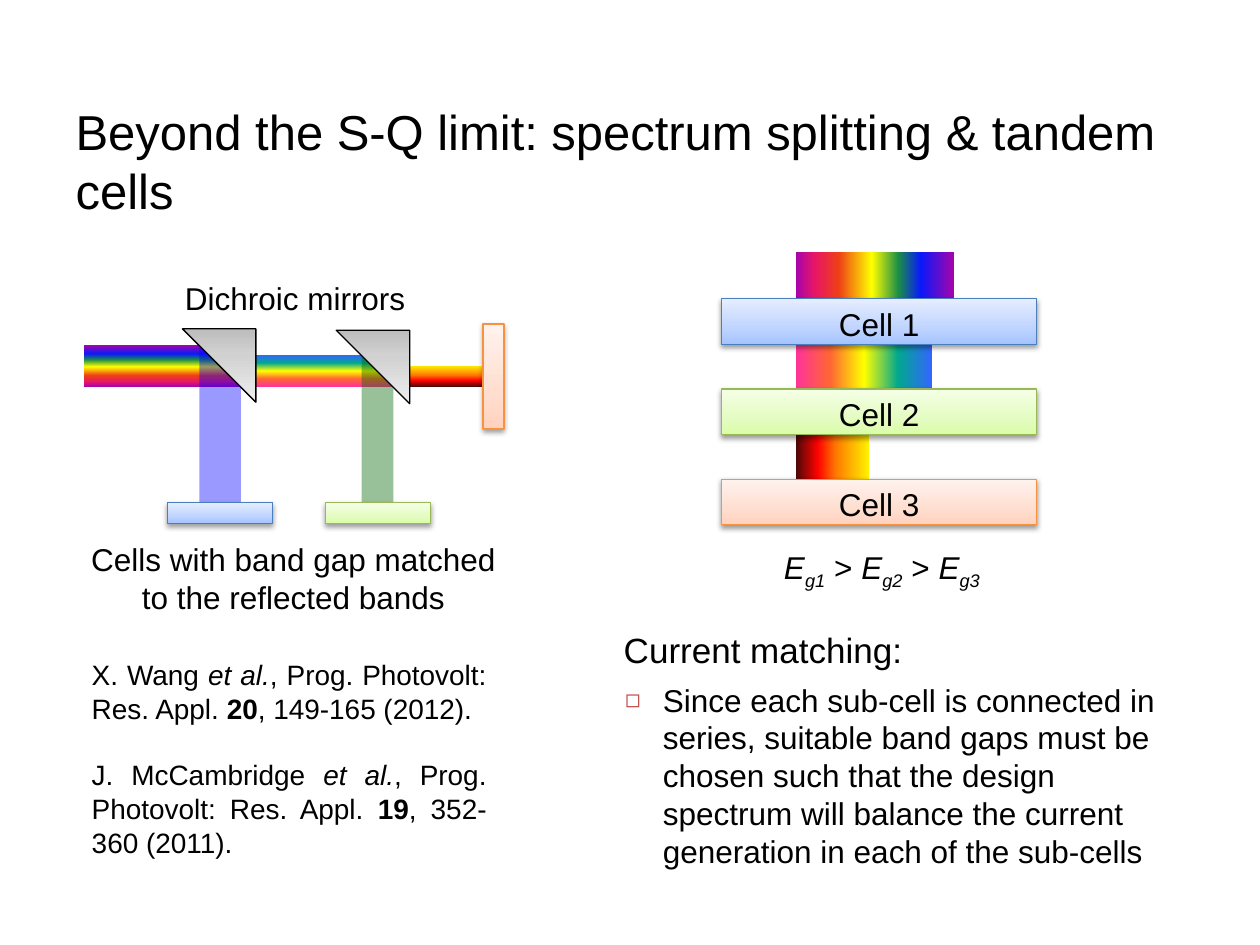
from dataclasses import dataclass

from lxml import etree
from pptx import Presentation
from pptx.dml.color import RGBColor
from pptx.enum.shapes import MSO_SHAPE
from pptx.enum.text import MSO_ANCHOR, MSO_AUTO_SIZE, PP_ALIGN
from pptx.oxml.ns import qn
from pptx.util import Cm, Pt

RECT, WEDGE = MSO_SHAPE.RECTANGLE, MSO_SHAPE.RIGHT_TRIANGLE
TOP, MIDDLE = MSO_ANCHOR.TOP, MSO_ANCHOR.MIDDLE
LEFT, CENTER, JUSTIFY = PP_ALIGN.LEFT, PP_ALIGN.CENTER, PP_ALIGN.JUSTIFY
FIXED = MSO_AUTO_SIZE.NONE


@dataclass(frozen=True)
class Theme:
    font: str = "Arial"
    ink: str = "000000"
    mark: str = "C0504D"
    blue: str = "0000FF"
    green: str = "006600"
    title: int = 28
    head: int = 20
    text: int = 18
    small: int = 16
    full: tuple = ((0, "A603AB"), (21, "0819FB"), (35, "1A8D48"), (52, "FFFF00"),
                   (73, "EE3F17"), (88, "E81766"), (100, "A603AB"))
    mid: tuple = ((0, "FF3399"), (25, "FF6633"), (50, "FFFF00"),
                  (75, "01A78F"), (100, "3366FF"))
    low: tuple = ((0, "FFF200"), (45, "FF7A00"), (70, "FF0300"), (100, "4D0808"))
    glass: tuple = ((0, "BDBDBD"), (35, "D1D1D1"), (100, "EEEEEE"))
    cells: tuple = (
        (((0, "A4C4FF"), (35, "BFD4FF"), (100, "E6EEFF")), "4B7EBC"),
        (((0, "DAFDA7"), (35, "E4FCC2"), (100, "F5FFE7")), "98B955"),
        (((0, "FFD2BD"), (35, "FFDED0"), (100, "FFF2ED")), "F69240"),
    )


def node(parent, tag, **attrs):
    return etree.SubElement(parent, qn(tag), {k: str(v) for k, v in attrs.items()})


class Deck:
    def __init__(self, theme):
        self.theme = theme
        self.file = Presentation()
        self.file.slide_width, self.file.slide_height = Cm(25.4), Cm(19.05)
        self.slide = self.file.slides.add_slide(self.file.slide_layouts[1])

    def style(self, para, size, align):
        para.alignment = align
        for run in para.runs:
            run.font.name = self.theme.font
            run.font.size = Pt(size)
            run.font.color.rgb = RGBColor.from_string(self.theme.ink)

    def place(self, shape, box):
        shape.left, shape.top, shape.width, shape.height = map(Cm, box)
        frame = shape.text_frame
        frame.word_wrap = True
        frame.auto_size = FIXED
        return frame

    def shape(self, kind, box, line=None):
        item = self.slide.shapes.add_shape(kind, *map(Cm, box))
        item.shadow.inherit = False
        if line:
            item.line.color.rgb = RGBColor.from_string(line)
            item.line.width = Pt(0.75)
        else:
            item.line.fill.background()
        return item

    def blend(self, item, stops, angle):
        item.fill.gradient()
        grad = item._element.spPr.find(qn("a:gradFill"))
        for child in list(grad):
            grad.remove(child)
        ramp = node(grad, "a:gsLst")
        for pos, color in stops:
            node(node(ramp, "a:gs", pos=pos * 1000), "a:srgbClr", val=color)
        node(grad, "a:lin", ang=angle * 60000, scaled=0)

    def beam(self, box, stops, angle):
        self.blend(self.shape(RECT, box), stops, angle)

    def ray(self, box, color):
        item = self.shape(RECT, box)
        item.fill.solid()
        item.fill.fore_color.rgb = RGBColor.from_string(color)
        tint = item._element.spPr.find(qn("a:solidFill")).find(qn("a:srgbClr"))
        node(tint, "a:alpha", val=40000)

    def mirror(self, box):
        item = self.shape(WEDGE, box, self.theme.ink)
        self.blend(item, self.theme.glass, 270)
        form = item._element.spPr.find(qn("a:xfrm"))
        form.set("flipH", "1")
        form.set("flipV", "1")

    def cell(self, box, look, label=None):
        stops, line = look
        item = self.shape(RECT, box, line)
        self.blend(item, stops, 270)
        list_ = item._element.spPr.find(qn("a:effectLst"))
        shade = node(list_, "a:outerShdw", blurRad=Pt(3.1), dist=Pt(1.6),
                     dir=5400000, rotWithShape=0)
        node(node(shade, "a:srgbClr", val=self.theme.ink), "a:alpha", val=38000)
        if label:
            frame = item.text_frame
            frame.vertical_anchor = TOP
            frame.text = label
            self.style(frame.paragraphs[0], self.theme.text, CENTER)

    def text(self, box, paras, size, align=CENTER, gap=0):
        item = self.slide.shapes.add_textbox(*map(Cm, box))
        frame = self.place(item, box)
        for i, parts in enumerate(paras):
            para = frame.add_paragraph() if i else frame.paragraphs[0]
            if i:
                para.space_before = Pt(gap)
            for words, look in parts:
                run = para.add_run()
                run.text = words
                run.font.italic = "i" in look
                run.font.bold = "b" in look
                if "s" in look:
                    run._r.get_or_add_rPr().set("baseline", "-25000")
            self.style(para, size, align)

    def title(self, box, words):
        frame = self.place(self.slide.shapes.title, box)
        frame.vertical_anchor = MIDDLE
        frame.text = words
        self.style(frame.paragraphs[0], self.theme.title, LEFT)

    def body(self, box, head, point):
        frame = self.place(self.slide.placeholders[1], box)
        frame.margin_top = Cm(0.34)
        frame.text = head
        first = frame.paragraphs[0]
        props = first._p.get_or_add_pPr()
        props.set("marL", "0")
        props.set("indent", "0")
        first.space_before = Pt(0)
        node(props, "a:buNone")
        self.style(first, self.theme.head, LEFT)
        item = frame.add_paragraph()
        item.text = point
        item.level = 1
        item.space_before = Pt(6)
        props = item._p.get_or_add_pPr()
        props.set("marL", str(Cm(0.79)))
        props.set("indent", str(Cm(-0.76)))
        node(node(props, "a:buClr"), "a:srgbClr", val=self.theme.mark)
        node(props, "a:buSzPct", val=80000)
        node(props, "a:buChar", char="◻")
        self.style(item, self.theme.text, LEFT)


def main():
    theme = Theme()
    deck = Deck(theme)
    deck.title((1.27, 1.75, 22.86, 2.97),
               "Beyond the S-Q limit: spectrum splitting & tandem cells")

    beams = ((theme.full, 90, (1.7, 6.96, 3.18, 0.84), 3.18),
             (theme.mid, 270, (4.88, 7.16, 3.18, 0.64), 2.74),
             (theme.low, 90, (8.05, 7.37, 1.9, 0.43), 1.47))
    for stops, angle, box, _ in beams:
        deck.beam(box, stops, angle)
    deck.ray((4.02, 6.96, 0.84, 3.38), theme.blue)
    deck.ray((7.29, 6.96, 0.64, 3.38), theme.green)
    deck.mirror((3.68, 6.63, 1.48, 1.48))
    deck.mirror((6.78, 6.66, 1.48, 1.48))
    spots = ((3.38, 10.13, 2.12, 0.42), (6.56, 10.13, 2.12, 0.42),
             (9.74, 6.53, 0.42, 2.12))
    for box, look in zip(spots, theme.cells):
        deck.cell(box, look)

    deck.text((3.45, 5.51, 5, 1.02), [[("Dichroic mirrors", "")]], theme.text)
    deck.text((1.57, 10.77, 8.69, 1.8),
              [[("Cells with band gap matched to the reflected bands", "")]],
              theme.text)
    papers = (("X. Wang ", "20", ", 149-165 (2012)."),
              ("J. McCambridge ", "19", ", 352-360 (2011)."))
    deck.text((1.6, 13.13, 8.46, 4.37),
              [[(name, ""), ("et al.", "i"), (", Prog. Photovolt: Res. Appl. ", ""),
                (issue, "b"), (pages, "")] for name, issue, pages in papers],
              theme.small, JUSTIFY, 19)

    for i, (stops, angle, _, width) in enumerate(beams):
        deck.beam((16.05, 5.08 + 1.84 * i, width, 0.92), stops, (angle + 90) % 360)
    for i, look in enumerate(theme.cells):
        deck.cell((14.55, 6.02 + 1.82 * i, 6.35, 0.92), look, f"Cell {i + 1}")
    gaps = []
    for i in range(1, 4):
        if gaps:
            gaps.append((" > ", ""))
        gaps += [("E", "i"), (f"g{i}", "is")]
    deck.text((15.24, 10.92, 5.08, 1.02), [gaps], theme.text)
    deck.body((12.32, 12.32, 11.23, 5.28), "Current matching:",
              "Since each sub-cell is connected in series, suitable band gaps must be "
              "chosen such that the design spectrum will balance the current "
              "generation in each of the sub-cells")
    deck.file.save("out.pptx")


if __name__ == "__main__":
    main()
